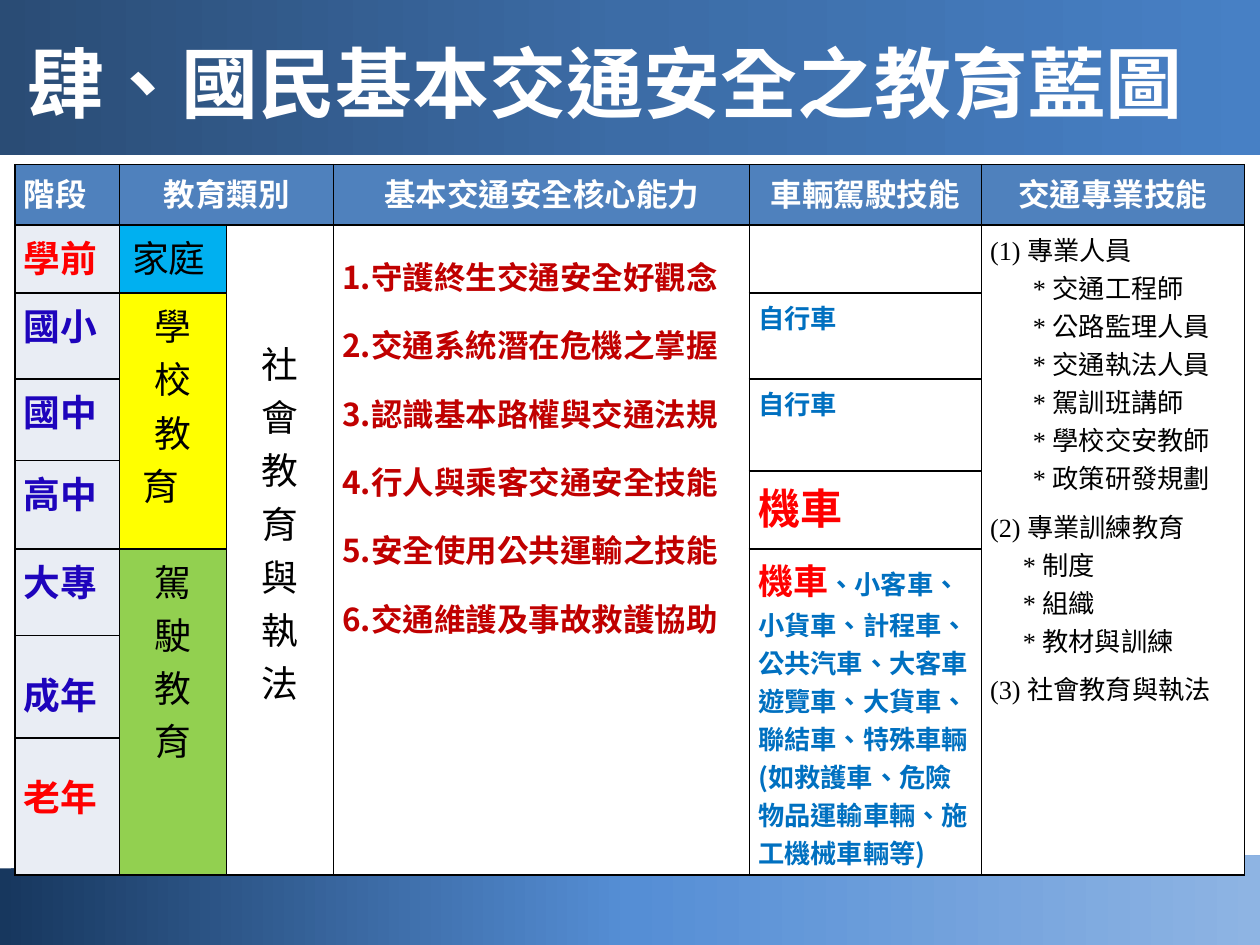
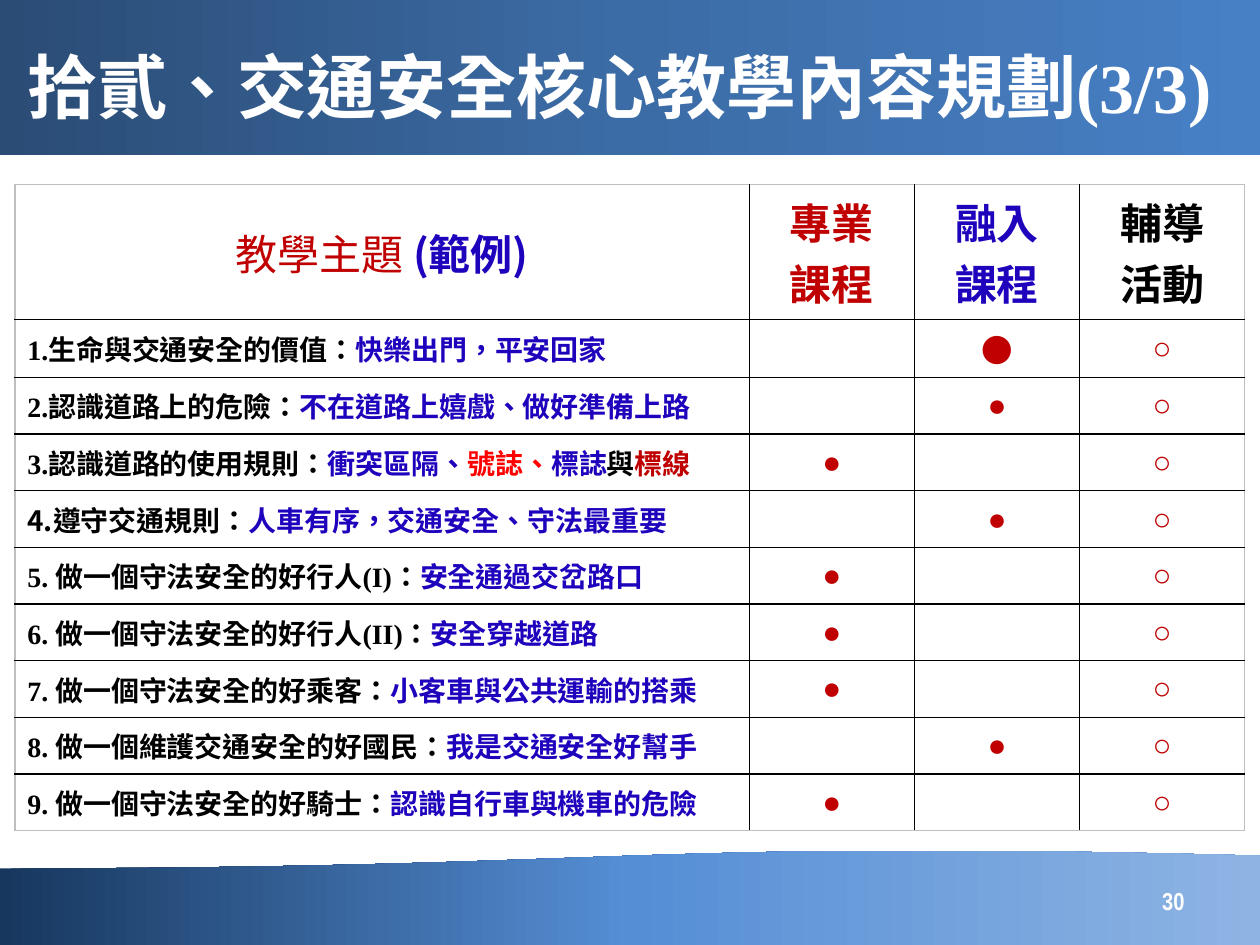
from dataclasses import dataclass, field
from typing import NamedTuple, Optional

from lxml import etree
from pptx import Presentation
from pptx.dml.color import RGBColor
from pptx.enum.shapes import MSO_SHAPE as Shape
from pptx.enum.text import MSO_ANCHOR as Anchor, PP_ALIGN as Align
from pptx.oxml import parse_xml
from pptx.oxml.ns import nsdecls, qn
from pptx.util import Inches, Pt


@dataclass(frozen=True)
class Theme:
    white: str = "FFFFFF"
    black: str = "000000"
    red: str = "FF0000"
    crimson: str = "C00000"
    indigo: str = "1E04BC"
    violet: str = "1E03BD"
    blue: str = "0070C0"
    header: str = "4F81BD"
    stage: str = "E9EDF4"
    family: str = "00B0F0"
    school: str = "FFFF00"
    driving: str = "92D050"
    frame: str = "BFBFBF"
    band: tuple = ("2A4C75", "3C6CA6", "4780C5")
    wave: tuple = ("17375E", "558ED5", "8EB4E3")
    cjk: str = "Noto Sans CJK SC"
    east: str = "Noto Sans CJK TC"
    serif: str = "Times New Roman"
    sans: str = "Arial"
    narrow: str = "Arial Narrow"
    page: int = 14
    small: int = 15
    topic: int = 16
    body: int = 18
    medium: int = 20
    stage_size: int = 21
    large: int = 24
    long_title: int = 40
    title: int = 44


T = Theme()


class Box(NamedTuple):
    """Left, top, width and height in percent of the slide."""
    x: float
    y: float
    w: float
    h: float


class Run(NamedTuple):
    text: str
    size: float
    color: str = T.black
    bold: bool = False
    font: str = T.cjk


@dataclass
class Para:
    runs: list[Run]
    align: Align = Align.LEFT
    spacing: Optional[float] = None
    before: float = 0
    left: float = 0
    right: float = 0
    hang: float = 0


@dataclass
class Cell:
    row: int
    col: int
    paras: list[Para] = field(default_factory=list)
    fill: Optional[str] = None
    rows: int = 1
    cols: int = 1
    top: Optional[float] = None


class Grid(NamedTuple):
    box: Box
    cols: tuple
    rows: tuple
    margins: tuple
    anchor: Anchor
    frame: str


prs = Presentation()
prs.slide_width, prs.slide_height = Inches(10), Inches(7.5)


def place(box: Box) -> tuple:
    w, h = prs.slide_width / 100, prs.slide_height / 100
    return int(box.x * w), int(box.y * h), int(box.w * w), int(box.h * h)


def write(tf, paras: list[Para]) -> None:
    for i, para in enumerate(paras):
        p = tf.paragraphs[0] if i == 0 else tf.add_paragraph()
        p.alignment = para.align
        if para.spacing:
            p.line_spacing = para.spacing
        if para.before:
            p.space_before = Pt(para.before)
        pPr = p._p.get_or_add_pPr()
        for name, value in (("marL", para.left), ("marR", para.right), ("indent", para.hang)):
            pPr.set(name, str(Inches(value)))
        for run in para.runs:
            r = p.add_run()
            r.text = run.text
            r.font.size, r.font.bold, r.font.name = Pt(run.size), run.bold, run.font
            r.font.color.rgb = RGBColor.from_string(run.color)
            rPr = r.font._element
            rPr.set("lang", "zh-TW")
            ea = etree.Element(qn("a:ea"), typeface=T.sans if run.font == T.sans else T.east)
            rPr.find(qn("a:latin")).addnext(ea)


def add_text(s, box: Box, para: Para) -> None:
    tf = s.shapes.add_textbox(*place(box)).text_frame
    tf.word_wrap = True
    tf.vertical_anchor = Anchor.MIDDLE
    write(tf, [para])


def add_band(s, kind: Shape, box: Box, colors: tuple, turn: int) -> None:
    sp = s.shapes.add_shape(kind, *place(box))
    sp.shadow.inherit = False
    sp.line.fill.background()
    sp.rotation = turn
    stops = "".join(f'<a:gs pos="{i * 50000}"><a:srgbClr val="{c}"/></a:gs>'
                    for i, c in enumerate(colors))
    grad = parse_xml(f'<a:gradFill {nsdecls("a")} rotWithShape="1"><a:gsLst>{stops}</a:gsLst>'
                     f'<a:lin ang="{turn * 60000}" scaled="0"/></a:gradFill>')
    sp._element.spPr.find(qn("a:prstGeom")).addnext(grad)


def new_slide(title: Run, title_height: float):
    s = prs.slides.add_slide(prs.slide_layouts[6])
    add_band(s, Shape.FLOWCHART_DOCUMENT, Box(0, 89.87, 100, 10.2), T.wave, 180)
    add_band(s, Shape.RECTANGLE, Box(0, 0, 100, 16.4), T.band, 0)
    add_text(s, Box(1.18, 2.8, 97.6, title_height), Para([title]))
    return s


def add_borders(cell, colors: dict[str, str]) -> None:
    tcPr = cell._tc.get_or_add_tcPr()
    for i, (side, color) in enumerate(colors.items()):
        tcPr.insert(i, parse_xml(
            f'<a:ln{side} {nsdecls("a")} w="{Pt(1)}"><a:solidFill><a:srgbClr val="{color}"/>'
            f'</a:solidFill></a:ln{side}>'))


def fill_cell(table, c: Cell, grid: Grid) -> None:
    cell = table.cell(c.row, c.col)
    if c.rows * c.cols > 1:
        cell.merge(table.cell(c.row + c.rows - 1, c.col + c.cols - 1))
    side, edge = grid.margins
    cell.margin_left = cell.margin_right = Inches(side)
    cell.margin_top = Inches(edge if c.top is None else c.top)
    cell.margin_bottom = Inches(edge)
    cell.vertical_anchor = grid.anchor
    if c.fill:
        cell.fill.solid()
        cell.fill.fore_color.rgb = RGBColor.from_string(c.fill)
    write(cell.text_frame, c.paras)


def add_grid(s, grid: Grid, cells: list[Cell]) -> None:
    x, y, w, h = place(grid.box)
    n_rows, n_cols = len(grid.rows), len(grid.cols)
    table = s.shapes.add_table(n_rows, n_cols, x, y, w, h).table
    table.first_row = table.horz_banding = False
    for col, share in zip(table.columns, grid.cols):
        col.width = int(w * share / sum(grid.cols))
    for row, share in zip(table.rows, grid.rows):
        row.height = int(h * share / sum(grid.rows))
    for i in range(n_rows):
        for j in range(n_cols):
            cell = table.cell(i, j)
            cell.fill.background()
            edges = {"L": j == 0, "R": j == n_cols - 1, "T": i == 0, "B": i == n_rows - 1}
            add_borders(cell, {k: grid.frame if outer else T.black for k, outer in edges.items()})
    for c in cells:
        fill_cell(table, c, grid)


def stacked(text: str) -> list[Para]:
    return [Para([Run(ch, T.stage_size)], Align.CENTER) for ch in text]


def professional_skills() -> list[Para]:
    groups = (
        ("(1) 專業人員", 0.34, ("交通工程師", "公路監理人員", "交通執法人員",
                            "駕訓班講師", "學校交安教師", "政策研發規劃")),
        ("(2) 專業訓練教育", 0.26, ("制度", "組織", "教材與訓練")),
        ("(3) 社會教育與執法", 0, ()),
    )
    paras = []
    for heading, indent, items in groups:
        paras.append(Para([Run(heading, T.small, font=T.serif)], before=6 if paras else 0))
        paras += [Para([Run(f"* {item}", T.small, font=T.serif)], left=indent) for item in items]
    return paras


def build_blueprint() -> None:
    s = new_slide(Run("肆、國民基本交通安全之教育藍圖", T.title, T.white, True), 11.6)
    grid = Grid(Box(1.18, 17.43, 97.6, 75.2), (0.83, 0.85, 0.85, 3.3, 1.84, 2.09),
                (0.48, 0.54, 0.68, 0.65, 0.08, 0.62, 0.69, 0.81, 1.09),
                (0.07, 0.04), Anchor.TOP, T.black)
    headers = (("階段", 0, 1), ("教育類別", 1, 2), ("基本交通安全核心能力", 3, 1),
               ("車輛駕駛技能", 4, 1), ("交通專業技能", 5, 1))
    cells = [Cell(0, col, [Para([Run(text, T.body, T.white, True)],
                                Align.CENTER if col else Align.LEFT)], T.header, cols=span)
             for text, col, span in headers]
    stages = (("學前", 1, 1, T.red, None), ("國小", 2, 1, T.indigo, None),
              ("國中", 3, 1, T.indigo, None), ("高中", 4, 2, T.indigo, None),
              ("大專", 6, 1, T.indigo, None), ("成年", 7, 1, T.indigo, 1.5),
              ("老年", 8, 1, T.red, 1.5))
    cells += [Cell(row, 0, [Para([Run(text, T.stage_size, color, True)], spacing=spacing)],
                   T.stage, rows=span)
              for text, row, span, color, spacing in stages]
    school = stacked("學校教育")
    school[-1].right = 0.19
    skills = ("守護終生交通安全好觀念", "交通系統潛在危機之掌握", "認識基本路權與交通法規",
              "行人與乘客交通安全技能", "安全使用公共運輸之技能", "交通維護及事故救護協助")
    core = [Para([Run(f"{n}.{skill}", T.body, T.crimson, True)], spacing=1.5)
            for n, skill in enumerate(skills, 1)]

    def vehicle(text: str) -> Run:
        return Run(text, T.small, T.blue, True)

    licences = [
        Para([Run("機車", T.medium, T.red, True), vehicle("、小客車、")]),
        Para([vehicle("小貨車、計程車、")]),
        Para([vehicle("公共汽車、大客車遊覽車、大貨車、聯結車、特殊車輛"
                      "(如救護車、危險物品運輸車輛、施工機械車輛等)")]),
    ]
    cells += [
        Cell(1, 1, [Para([Run("家庭 ", T.stage_size)], Align.CENTER)], T.family),
        Cell(2, 1, school, T.school, rows=4),
        Cell(6, 1, stacked("駕駛教育"), T.driving, rows=3),
        Cell(1, 2, stacked("社會教育與執法"), T.white, rows=8, top=0.88),
        Cell(1, 3, core, T.white, rows=8),
        Cell(1, 4, fill=T.white),
        Cell(2, 4, [Para([vehicle("自行車")])], T.white),
        Cell(3, 4, [Para([vehicle("自行車")])], T.white, rows=2),
        Cell(5, 4, [Para([Run("機車", T.large, T.red, True)])], T.white),
        Cell(6, 4, licences, T.white, rows=3),
        Cell(1, 5, professional_skills(), T.white, rows=8),
    ]
    add_grid(s, grid, cells)


def build_topics() -> None:
    s = new_slide(Run("拾貳、交通安全核心教學內容規劃(3/3)", T.long_title, T.white, True, T.serif),
                  12.4)
    special, blended = 1, 2
    topics = (
        ("1.生命與交通安全的價值：", blended, (("快樂出門，平安回家", T.violet),)),
        ("2.認識道路上的危險：", blended, (("不在道路上嬉戲、做好準備上路", T.violet),)),
        ("3.認識道路的使用規則：", special,
         (("衝突區隔、", T.violet), ("號誌、", T.red), ("標誌", T.violet),
          ("與", T.black), ("標線", T.crimson))),
        ("4.遵守交通規則：", blended, (("人車有序，交通安全、守法最重要", T.violet),)),
        ("5. 做一個守法安全的好行人(I)：", special, (("安全通過交岔路口", T.violet),)),
        ("6. 做一個守法安全的好行人(II)：", special, (("安全穿越道路", T.violet),)),
        ("7. 做一個守法安全的好乘客：", special, (("小客車與公共運輸的搭乘", T.violet),)),
        ("8. 做一個維護交通安全的好國民：", blended, (("我是交通安全好幫手", T.violet),)),
        ("9. 做一個守法安全的好騎士：", special, (("認識自行車與機車的危險", T.violet),)),
    )
    grid = Grid(Box(1.18, 19.55, 97.6, 68.4), (5.83, 1.31, 1.31, 1.31),
                (1.07, 0.46) + (0.45,) * (len(topics) - 1), (0.1, 0.05), Anchor.MIDDLE, T.frame)
    cells = [Cell(0, 0, [Para([Run("教學主題 ", T.large, T.crimson),
                               Run("(範例)", T.large, T.violet, True)], Align.CENTER)])]
    courses = ((("專業", "課程"), T.crimson), (("融入", "課程"), T.violet),
               (("輔導", "活動"), T.black))
    cells += [Cell(0, col, [Para([Run(line, T.large, color, True)], Align.CENTER)
                            for line in lines])
              for col, (lines, color) in enumerate(courses, 1)]
    for row, (label, course, details) in enumerate(topics, 1):
        font = T.cjk if row == 4 else T.serif
        runs = [Run(text, T.topic, color, True, font)
                for text, color in ((label, T.black), *details)]
        hang = 0.19 if row <= 2 else 0
        dot = Run("●", T.body, T.crimson, font=T.east if row == 1 else T.sans)
        ring = Run("○", T.body, T.crimson, True, T.sans)
        cells += [Cell(row, 0, [Para(runs, left=hang, hang=-hang)]),
                  Cell(row, course, [Para([dot], Align.CENTER)]),
                  Cell(row, 3, [Para([ring], Align.CENTER)])]
    add_grid(s, grid, cells)
    add_text(s, Box(71.7, 92.67, 23.3, 5.33),
             Para([Run("30", T.page, T.white, True, T.narrow)], Align.RIGHT))


def main() -> None:
    build_blueprint()
    build_topics()
    prs.save("out.pptx")


if __name__ == "__main__":
    main()
